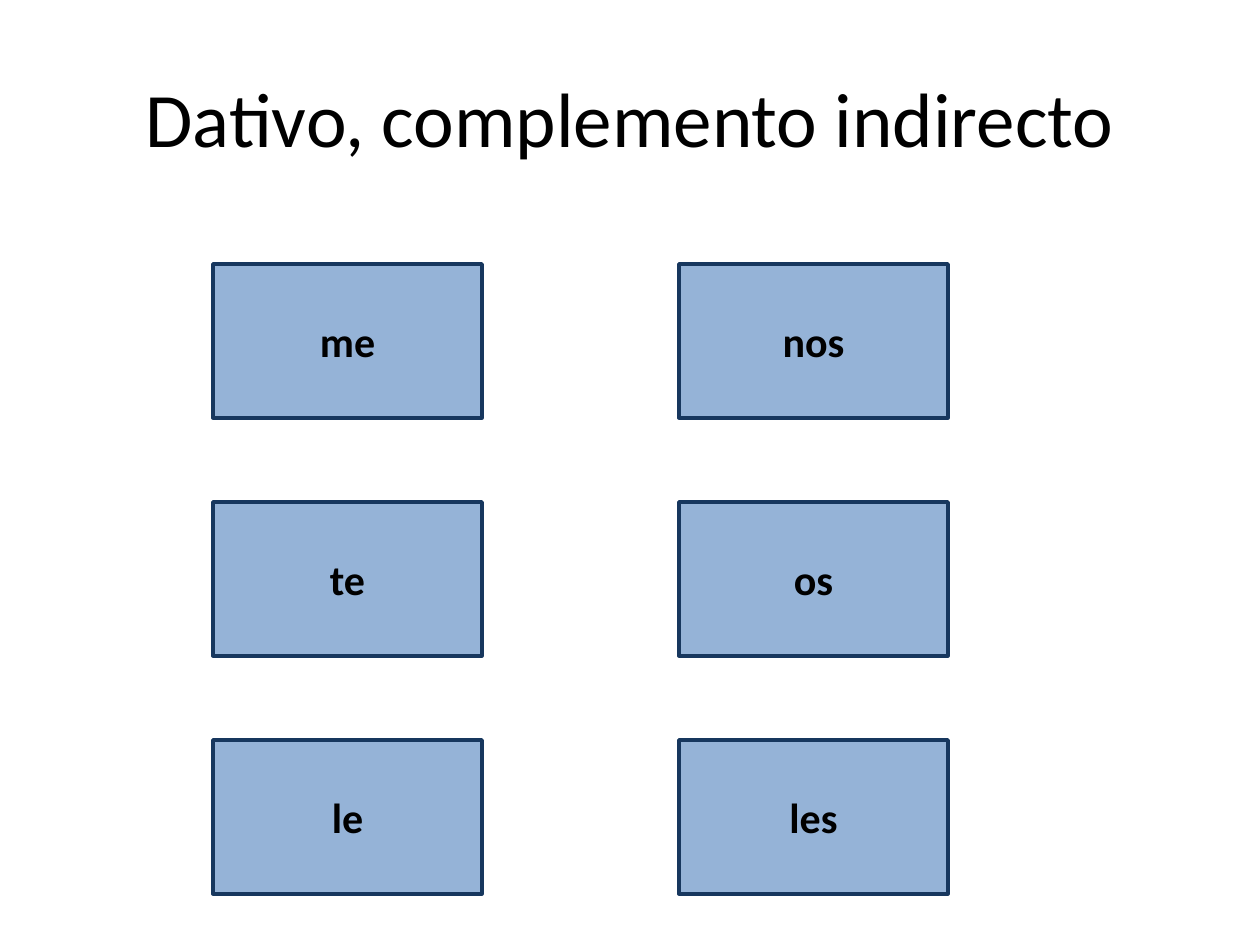
"""Build a slide with the Spanish indirect object pronouns in a grid."""
from pptx import Presentation
from pptx.dml.color import RGBColor
from pptx.enum.shapes import MSO_SHAPE
from pptx.enum.text import MSO_ANCHOR, PP_ALIGN
from pptx.util import Pt

RECTANGLE = MSO_SHAPE.RECTANGLE
MIDDLE = MSO_ANCHOR.MIDDLE
CENTER = PP_ALIGN.CENTER

PX = 914400 // 126
COLORS = {"text": "000000", "card": "95B3D7", "border": "17375E"}
PRONOUNS = [["me", "te", "le"], ["nos", "os", "les"]]
CARD_LEFT, CARD_TOP = 213, 264
CARD_WIDTH, CARD_HEIGHT = 269, 154
COLUMN_STEP, ROW_STEP = 466, 238


def color(name):
    return RGBColor.from_string(COLORS[name])


def write(holder, text, size, bold=False):
    frame = holder.text_frame
    frame.word_wrap = True
    frame.vertical_anchor = MIDDLE
    paragraph = frame.paragraphs[0]
    paragraph.alignment = CENTER
    run = paragraph.add_run()
    run.text = text
    run.font.name = "Calibri"
    run.font.size = Pt(size)
    run.font.bold = bold
    run.font.color.rgb = color("text")


presentation = Presentation()
presentation.slide_width = 1260 * PX
presentation.slide_height = 945 * PX
slide = presentation.slides.add_slide(presentation.slide_layouts[5])

heading = slide.shapes.title
heading.left, heading.top = 63 * PX, 38 * PX
heading.width, heading.height = 1134 * PX, 157 * PX
write(heading, "Dativo, complemento indirecto", size=44)

for column, pronouns in enumerate(PRONOUNS):
    for row, pronoun in enumerate(pronouns):
        card = slide.shapes.add_shape(
            RECTANGLE,
            (CARD_LEFT + column * COLUMN_STEP) * PX,
            (CARD_TOP + row * ROW_STEP) * PX,
            CARD_WIDTH * PX,
            CARD_HEIGHT * PX,
        )
        card.shadow.inherit = False
        card.fill.solid()
        card.fill.fore_color.rgb = color("card")
        card.line.color.rgb = color("border")
        card.line.width = Pt(2)
        write(card, pronoun, size=24, bold=True)

presentation.save("out.pptx")
